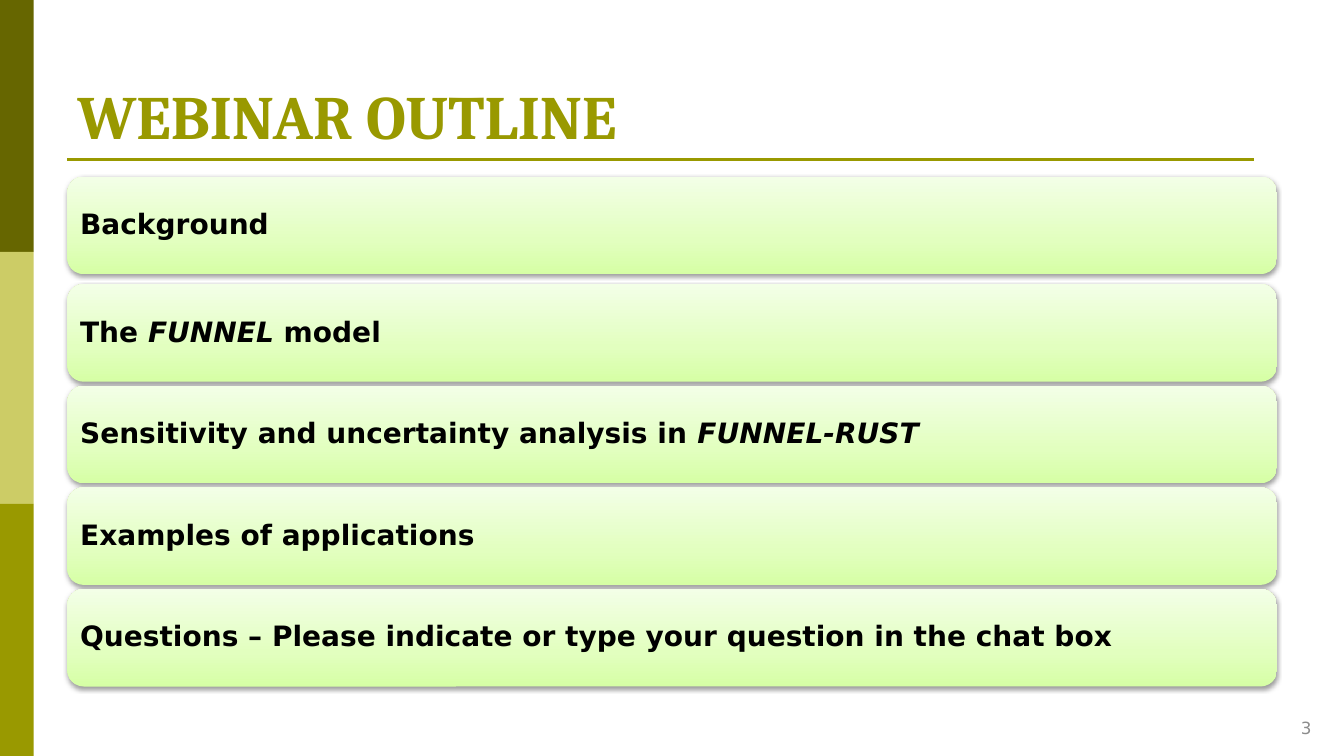
from copy import deepcopy

from lxml import etree
from pptx import Presentation
from pptx import util as u
from pptx.dml.color import RGBColor
from pptx.enum import shapes, text
from pptx.oxml.ns import qn

DARK = RGBColor(0x66, 0x66, 0x00)
PALE = RGBColor(0xCC, 0xCC, 0x66)
OLIVE = RGBColor(0x99, 0x99, 0x00)
GREY = RGBColor(0x8C, 0x8C, 0x8C)
BLACK = RGBColor(0x00, 0x00, 0x00)
GREENS = [
    (0, RGBColor(0xD6, 0xFF, 0xA5)),
    (0.35, RGBColor(0xE2, 0xFF, 0xBF)),
    (1, RGBColor(0xF3, 0xFF, 0xE7)),
]
HEAD, BODY = "Cambria", "DejaVu Sans"
LEFT = 1.7

# Every second piece of a topic is set in italics.
TOPICS = [
    ["Background"],
    ["The ", "FUNNEL", " model"],
    ["Sensitivity and uncertainty analysis in ", "FUNNEL-RUST"],
    ["Examples of applications"],
    ["Questions – Please indicate or type your question in the chat box"],
]


class Deck:
    def __init__(self):
        self.file = Presentation()
        self.file.slide_width = u.Cm(33.87)
        self.file.slide_height = u.Cm(19.05)
        self.slide = self.file.slides.add_slide(self.file.slide_layouts[6])

    def shape(self, kind, *box):
        item = self.slide.shapes.add_shape(kind, *map(u.Cm, box))
        item.shadow.inherit = False
        item.line.fill.background()
        return item

    def block(self, color, *box):
        item = self.shape(shapes.MSO_SHAPE.RECTANGLE, *box)
        item.fill.solid()
        item.fill.fore_color.rgb = color

    def rule(self, left, right, top):
        line = self.slide.shapes.add_connector(
            shapes.MSO_CONNECTOR.STRAIGHT, *map(u.Cm, (left, top, right, top)))
        line.line.color.rgb = OLIVE
        line.line.width = u.Pt(1.5)
        etree.SubElement(line._element.spPr, qn("a:effectLst"))

    def letter(self, frame, parts, face, size, color, bold=False,
               align=text.PP_ALIGN.LEFT, anchor=text.MSO_ANCHOR.MIDDLE):
        """Fill a text frame with one paragraph; odd parts are italic."""
        frame.word_wrap = True
        frame.vertical_anchor = anchor
        para = frame.paragraphs[0]
        para.alignment = align
        font = para.font
        font.name, font.size, font.bold = face, u.Pt(size), bold
        font.color.rgb = color
        for i, part in enumerate(parts):
            run = para.add_run()
            run.text = part
            if i % 2:
                run.font.italic = True
        return para

    def label(self, words, box, *style, **more):
        frame = self.slide.shapes.add_textbox(*map(u.Cm, box)).text_frame
        self.letter(frame, [words], *style, **more)

    def shade(self, item):
        """Give a shape the green gradient, rising from the bottom."""
        item.fill.gradient()
        item.fill.gradient_angle = 90
        first = item._element.spPr.find(".//" + qn("a:gs"))
        first.addnext(deepcopy(first))
        for stop, (place, color) in zip(item.fill.gradient_stops, GREENS):
            stop.position = place
            stop.color.rgb = color

    def shadow(self, item):
        effects = item._element.spPr.find(qn("a:effectLst"))
        outer = etree.SubElement(
            effects, qn("a:outerShdw"), blurRad=str(u.Pt(3.1)),
            dist=str(u.Pt(1.6)), dir="5400000", rotWithShape="0")
        tint = etree.SubElement(outer, qn("a:srgbClr"), val=str(BLACK))
        etree.SubElement(tint, qn("a:alpha"), val="38000")

    def topic(self, parts, top):
        bar = self.shape(shapes.MSO_SHAPE.ROUNDED_RECTANGLE,
                         LEFT, top, 30.48, 2.46)
        self.shade(bar)
        self.shadow(bar)
        frame = bar.text_frame
        frame.margin_left = frame.margin_right = u.Cm(0.2)
        para = self.letter(frame, parts, BODY, 20, BLACK, bold=True)
        para.line_spacing = 0.9


def main():
    deck = Deck()
    for i, color in enumerate([DARK, PALE, OLIVE]):
        deck.block(color, 0, i * 6.35, 0.85, 6.35)
    deck.rule(LEFT, 31.6, 4.02)
    deck.label("WEBINAR OUTLINE", (LEFT, 0.76, 26.82, 3.18), HEAD, 44, OLIVE,
               bold=True, anchor=text.MSO_ANCHOR.BOTTOM)
    deck.label("3", (31.04, 17.83, 2.26, 1.02), BODY, 12, GREY,
               align=text.PP_ALIGN.RIGHT)
    tops = [4.45] + [7.16 + 2.56 * i for i in range(len(TOPICS) - 1)]
    for parts, top in zip(TOPICS, tops):
        deck.topic(parts, top)
    deck.file.save("out.pptx")


if __name__ == "__main__":
    main()
